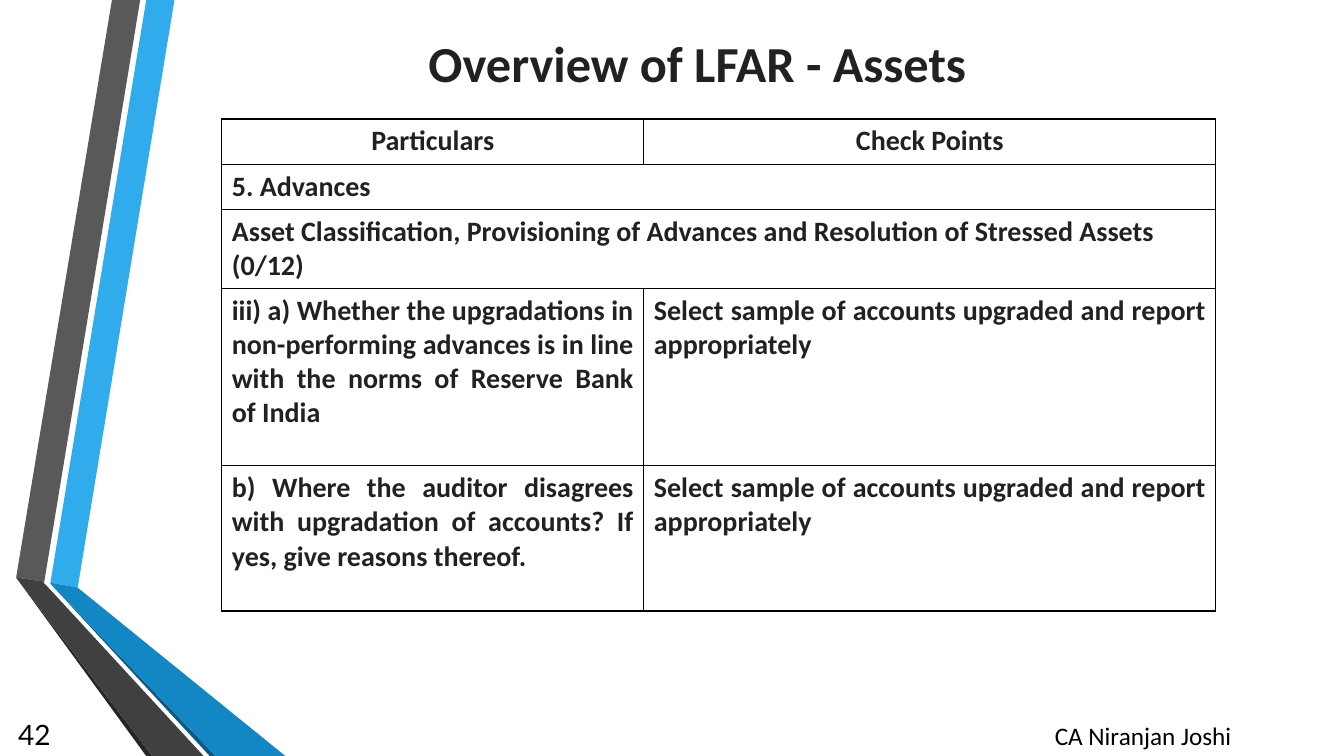
from dataclasses import dataclass
from typing import Any

from lxml import etree
from pptx import Presentation
from pptx.dml.color import RGBColor
from pptx.enum.text import MSO_ANCHOR, PP_ALIGN
from pptx.oxml.ns import qn
from pptx.util import Inches, Pt

LEFT, CENTER, RIGHT, JUSTIFY = PP_ALIGN.LEFT, PP_ALIGN.CENTER, PP_ALIGN.RIGHT, PP_ALIGN.JUSTIFY
TOP, MIDDLE = MSO_ANCHOR.TOP, MSO_ANCHOR.MIDDLE

BLACK = RGBColor(0x00, 0x00, 0x00)
INK = RGBColor(0x21, 0x21, 0x21)
SKY = RGBColor(0x30, 0xAC, 0xEC)
BLUE = RGBColor(0x12, 0x87, 0xC3)
NAVY = RGBColor(0x0C, 0x5A, 0x82)
GRAY = RGBColor(0x59, 0x59, 0x59)
DARK_GRAY = RGBColor(0x40, 0x40, 0x40)
CHARCOAL = RGBColor(0x26, 0x26, 0x26)

SLIDE_WIDTH, SLIDE_HEIGHT = Inches(13.33), Inches(7.5)


def across(percent: float) -> int:
    return round(SLIDE_WIDTH * percent / 100)


def down(percent: float) -> int:
    return round(SLIDE_HEIGHT * percent / 100)


@dataclass(frozen=True)
class Band:
    """A filled outline whose points are percentages of the slide."""
    color: RGBColor
    points: tuple[tuple[float, float], ...]


@dataclass(frozen=True)
class Frame:
    """A rectangle in percentages of the slide."""
    left: float
    top: float
    width: float
    height: float


@dataclass(frozen=True)
class Style:
    size: float
    color: RGBColor
    align: PP_ALIGN = CENTER
    bold: bool = False
    font: str = "Calibri"


@dataclass(frozen=True)
class Label:
    text: str
    frame: Frame
    style: Style
    anchor: MSO_ANCHOR


@dataclass(frozen=True)
class Row:
    """A table row; a single text spans all columns."""
    height: float
    texts: tuple[str, ...]
    align: PP_ALIGN


BANDS = (
    Band(SKY, ((3.75, 77.07), (5.78, 77.73), (12.98, 0), (10.88, 0))),
    Band(GRAY, ((10.43, 0), (8.33, 0), (1.2, 76.4), (3.3, 76.93))),
    Band(CHARCOAL, ((1.2, 76.4), (10.88, 100), (11.33, 100))),
    Band(NAVY, ((3.75, 77.2), (15.6, 100), (16.05, 100))),
    Band(BLUE, ((3.75, 77.07), (3.75, 77.2), (16.05, 100), (21.23, 100), (5.78, 77.73))),
    Band(DARK_GRAY, ((15.15, 100), (3.6, 77.73), (3.23, 77.07), (3.3, 76.93),
                     (1.2, 76.4), (11.33, 100))),
)

TITLE = Label("Overview of LFAR - Assets", Frame(18.15, 3.33, 67.5, 9.87),
              Style(36, INK, bold=True), MIDDLE)
FOOTERS = (
    Label("CA Niranjan Joshi", Frame(71.93, 94.67, 26.25, 5.33), Style(18, BLACK), TOP),
    Label("42", Frame(0, 94.4, 4.5, 5.33), Style(20, BLACK, RIGHT, font="Lato"), MIDDLE),
)

TABLE_LEFT, TABLE_TOP = 16.5, 15.73
COLUMN_WIDTHS = (31.4, 42.57)
SAMPLE_CHECK = "Select sample of accounts upgraded and report appropriately"
ROWS = (
    Row(6, ("Particulars", "Check Points"), CENTER),
    Row(6, ("5. Advances",), LEFT),
    Row(10.27, ("Asset Classification, Provisioning of Advances and Resolution of "
                "Stressed Assets (0/12)",), LEFT),
    Row(23.47, ("iii) a) Whether the upgradations in non-performing advances is in line "
                "with the norms of Reserve Bank of India", SAMPLE_CHECK), JUSTIFY),
    Row(19.2, ("b) Where the auditor disagrees with upgradation of accounts? If yes, "
               "give reasons thereof.", SAMPLE_CHECK), JUSTIFY),
)


def place(frame: Frame) -> tuple[int, int, int, int]:
    return across(frame.left), down(frame.top), across(frame.width), down(frame.height)


def write(text_frame: Any, text: str, style: Style) -> None:
    para = text_frame.paragraphs[0]
    para.alignment = style.align
    span = para.add_run()
    span.text = text
    formats = {"name": style.font, "size": Pt(style.size), "bold": style.bold}
    for name, value in formats.items():
        setattr(span.font, name, value)
    span.font.color.rgb = style.color


def draw_band(page: Any, band: Band) -> None:
    points = [(across(x), down(y)) for x, y in band.points]
    builder = page.shapes.build_freeform(*points[0], scale=1.0)
    builder.add_line_segments(points[1:], close=True)
    shape = builder.convert_to_shape()
    shape.shadow.inherit = False
    shape.fill.solid()
    shape.fill.fore_color.rgb = band.color
    shape.line.fill.background()


def fill_label(box: Any, label: Label) -> None:
    for name, value in zip(("left", "top", "width", "height"), place(label.frame)):
        setattr(box, name, value)
    box.text_frame.word_wrap = True
    box.text_frame.vertical_anchor = label.anchor
    write(box.text_frame, label.text, label.style)


def outline_cell(cell: Any) -> None:
    """Clear the cell's fill and give its four sides a thin black line."""
    cell.fill.background()
    properties = cell._tc.get_or_add_tcPr()
    for index, side in enumerate(("a:lnL", "a:lnR", "a:lnT", "a:lnB")):
        line = etree.Element(qn(side), w=str(Pt(1)))
        fill = etree.SubElement(line, qn("a:solidFill"))
        etree.SubElement(fill, qn("a:srgbClr"), val=str(BLACK))
        properties.insert(index, line)


def draw_table(page: Any) -> None:
    frame = Frame(TABLE_LEFT, TABLE_TOP, sum(COLUMN_WIDTHS), sum(row.height for row in ROWS))
    table = page.shapes.add_table(len(ROWS), len(COLUMN_WIDTHS), *place(frame)).table
    table.first_row = table.horz_banding = False
    for column, width in zip(table.columns, COLUMN_WIDTHS):
        column.width = across(width)
    last = len(COLUMN_WIDTHS) - 1
    for index, row in enumerate(ROWS):
        table.rows[index].height = down(row.height)
        for cell in table.rows[index].cells:
            outline_cell(cell)
        if len(row.texts) == 1:
            table.cell(index, 0).merge(table.cell(index, last))
        for column, text in enumerate(row.texts):
            write(table.cell(index, column).text_frame, text, Style(20, INK, row.align, bold=True))


def main() -> None:
    deck = Presentation()
    deck.slide_width, deck.slide_height = SLIDE_WIDTH, SLIDE_HEIGHT
    page = deck.slides.add_slide(deck.slide_layouts[5])
    for band in BANDS:
        draw_band(page, band)
    fill_label(page.shapes.title, TITLE)
    draw_table(page)
    for label in FOOTERS:
        fill_label(page.shapes.add_textbox(*place(label.frame)), label)
    deck.save("out.pptx")


if __name__ == "__main__":
    main()
